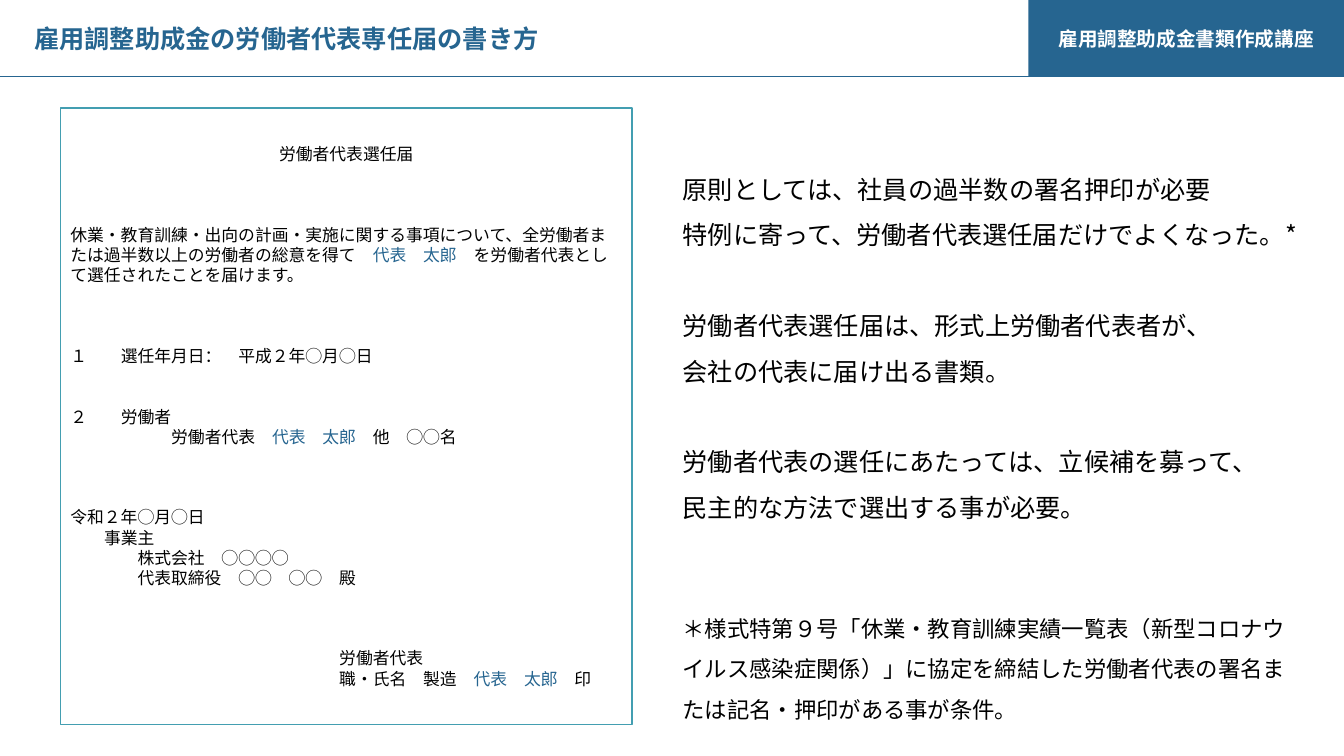
from lxml import etree
from pptx import Presentation
from pptx.dml.color import RGBColor
from pptx.enum.shapes import MSO_CONNECTOR, MSO_SHAPE
from pptx.enum.text import MSO_ANCHOR, MSO_AUTO_SIZE, PP_ALIGN
from pptx.oxml.ns import qn
from pptx.util import Inches, Pt

RECTANGLE, STRAIGHT = MSO_SHAPE.RECTANGLE, MSO_CONNECTOR.STRAIGHT
TOP, MIDDLE = MSO_ANCHOR.TOP, MSO_ANCHOR.MIDDLE
LEFT, CENTER = PP_ALIGN.LEFT, PP_ALIGN.CENTER
NO_AUTOFIT = MSO_AUTO_SIZE.NONE

BLUE = RGBColor(0x26, 0x65, 0x90)
TEAL = RGBColor(0x43, 0x9E, 0xB1)
WHITE = RGBColor(0xFF, 0xFF, 0xFF)
BLACK = RGBColor(0, 0, 0)
FONT = "Noto Sans CJK JP"
LINE_HEIGHT = 1.2

TITLE = "雇用調整助成金の労働者代表専任届の書き方"
COURSE = "雇用調整助成金書類作成講座"
NAME = "代表　太郎"

# FORM_PLACEHOLDER
FORM = [
    dict(text=["労働者代表選任届"], align=CENTER),
    dict(text=["休業・教育訓練・出向の計画・実施に関する事項について、"
               "全労働者または過半数以上の労働者の総意を得て　", NAME,
               "　を労働者代表として選任されたことを届けます。"], gap=3),
    dict(text=["１\t選任年月日：　平成２年◯月◯日"], gap=3, indent=3, hanging=3),
    dict(text=["２\t労働者"], gap=2, indent=3, hanging=3),
    dict(text=["労働者代表　", NAME, "　他　◯◯名"], indent=6),
    dict(text=["令和２年◯月◯日"], gap=3),
    dict(text=["事業主"], indent=2),
    dict(text=["株式会社　◯◯◯◯"], indent=4),
    dict(text=["代表取締役　◯◯　◯◯　殿"], indent=4),
    dict(text=["労働者代表"], gap=3, indent=16),
    dict(text=["職・氏名　製造　", NAME, "　印"], indent=16),
]
POINTS = [
    ["原則としては、社員の過半数の署名押印が必要",
     "特例に寄って、労働者代表選任届だけでよくなった。*"],
    ["労働者代表選任届は、形式上労働者代表者が、",
     "会社の代表に届け出る書類。"],
    ["労働者代表の選任にあたっては、立候補を募って、",
     "民主的な方法で選出する事が必要。"],
]
FOOTNOTE = ("＊様式特第９号「休業・教育訓練実績一覧表（新型コロナウイルス感染症関係）」"
            "に協定を締結した労働者代表の署名または記名・押印がある事が条件。")


def add_text(frame, text, size, color=BLACK, bold=False, align=LEFT,
             spacing=1.0, gap=0, indent=0, hanging=0):
    first = frame.paragraphs[0]
    paragraph = frame.add_paragraph() if first.runs else first
    paragraph.alignment = align
    paragraph.line_spacing = spacing
    paragraph.space_before = Pt(gap * size * LINE_HEIGHT * spacing)
    paragraph.space_after = Pt(0)
    properties = paragraph._p.get_or_add_pPr()
    properties.set("marL", str(Pt(indent * size)))
    properties.set("indent", str(-Pt(hanging * size)))
    etree.SubElement(properties, qn("a:buNone"))
    for index, part in enumerate(text):
        run = paragraph.add_run()
        run.text = part
        run.font.size = Pt(size)
        run.font.bold = bold
        run.font.name = FONT
        run.font.color.rgb = BLUE if index % 2 else color
        east_asian = etree.SubElement(run._r.get_or_add_rPr(), qn("a:ea"))
        east_asian.set("typeface", FONT)


def prepare(shape, left, top, width, height, anchor=TOP):
    shape.left, shape.top = Inches(left), Inches(top)
    shape.width, shape.height = Inches(width), Inches(height)
    frame = shape.text_frame
    frame.word_wrap = True
    frame.auto_size = NO_AUTOFIT
    frame.vertical_anchor = anchor
    return frame


def add_box(slide, left, top, width, height, fill, line=None):
    box = slide.shapes.add_shape(RECTANGLE, 0, 0, 0, 0)
    box.shadow.inherit = False
    box.fill.solid()
    box.fill.fore_color.rgb = fill
    if line is None:
        box.line.fill.background()
    else:
        box.line.color.rgb = line
        box.line.width = Pt(1)
    return prepare(box, left, top, width, height, MIDDLE)


def main():
    deck = Presentation()
    deck.slide_width, deck.slide_height = Inches(13.33), Inches(7.5)
    slide = deck.slides.add_slide(deck.slide_layouts[1])

    course = add_box(slide, 10.2, 0, 3.13, 0.76, BLUE)
    add_text(course, [COURSE], 14, color=WHITE, bold=True, align=CENTER)

    rule = slide.shapes.add_connector(
        STRAIGHT, Inches(13.33), Inches(0.76), Inches(0), Inches(0.76))
    rule.line.color.rgb = BLUE
    rule.line.width = Pt(0.5)
    etree.SubElement(rule._element.spPr, qn("a:effectLst"))

    title = prepare(slide.shapes.title, 0.24, 0.18, 5.6, 0.4, MIDDLE)
    add_text(title, [TITLE], 18, color=BLUE, bold=True)

    form = add_box(slide, 0.6, 1.07, 5.67, 6.12, WHITE, line=TEAL)
    for entry in FORM:
        add_text(form, size=12, **entry)

    points = prepare(slide.placeholders[1], 6.67, 1.53, 6.5, 4.15)
    for group_index, group in enumerate(POINTS):
        for line_index, sentence in enumerate(group):
            starts_group = group_index > 0 and line_index == 0
            add_text(points, [sentence], 18, spacing=1.5, gap=int(starts_group))

    footnote = prepare(slide.shapes.add_textbox(0, 0, 0, 0), 6.67, 5.92, 6.38, 1.27)
    add_text(footnote, [FOOTNOTE], 16, spacing=1.5)

    deck.save("out.pptx")


if __name__ == "__main__":
    main()
